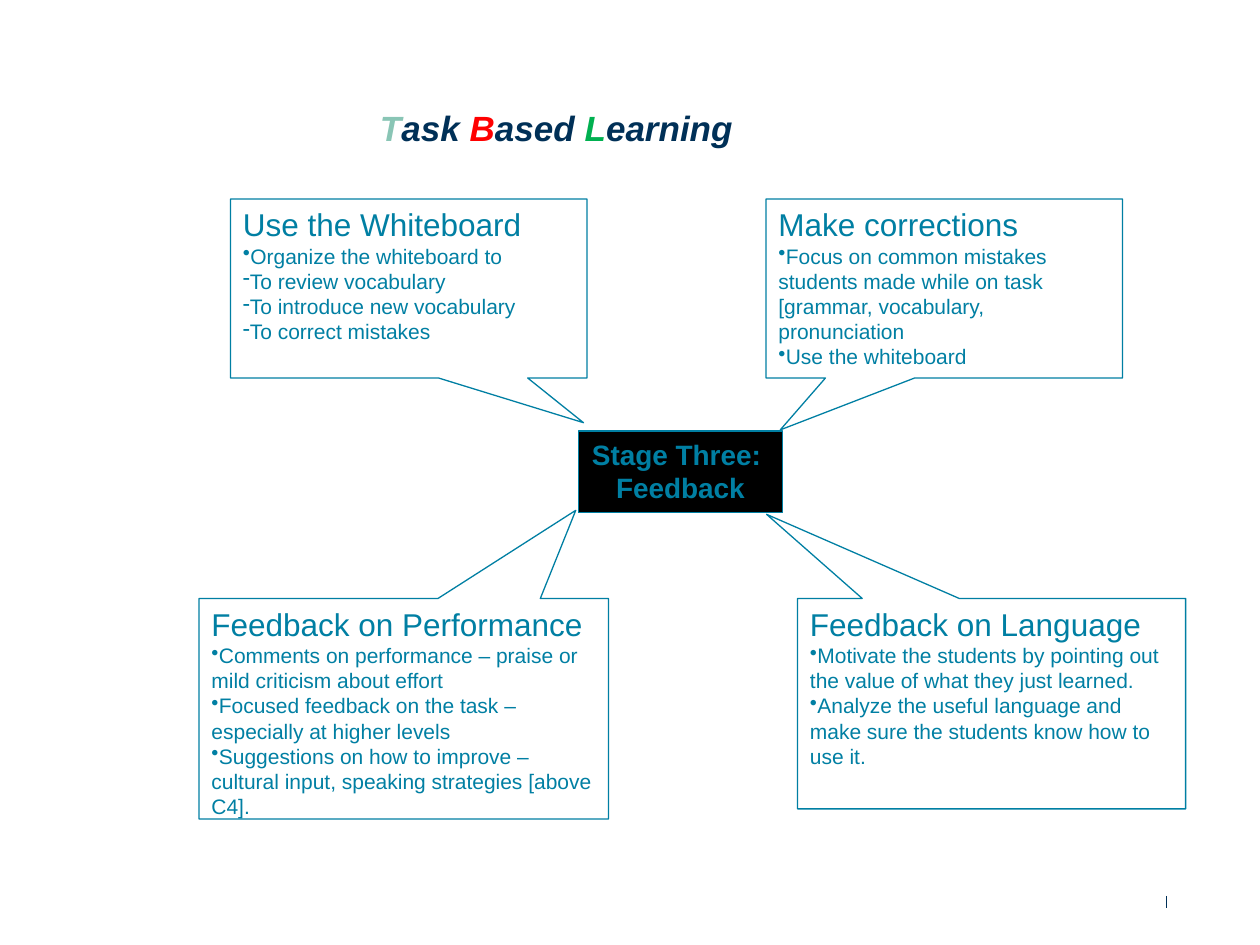
import pptx
import pptx.dml.color
import pptx.enum.shapes
import pptx.enum.text
import pptx.oxml.ns
import pptx.util
from lxml import etree
from pptx.util import Inches

NAVY = pptx.dml.color.RGBColor(0x00, 0x30, 0x57)
TEAL = pptx.dml.color.RGBColor(0x00, 0x7F, 0xA3)
MINT = pptx.dml.color.RGBColor(0x89, 0xC5, 0xB5)
RED = pptx.dml.color.RGBColor(0xFF, 0x00, 0x00)
GREEN = pptx.dml.color.RGBColor(0x00, 0xB0, 0x50)
BLACK = pptx.dml.color.RGBColor(0x00, 0x00, 0x00)

SHAPE = pptx.enum.shapes.MSO_SHAPE
ALIGN = pptx.enum.text.PP_ALIGN
ANCHOR = pptx.enum.text.MSO_ANCHOR

TITLE = [("T", MINT), ("ask ", NAVY), ("B", RED), ("ased ", NAVY),
         ("L", GREEN), ("earning", NAVY)]

CALLOUTS = [
    ((1.83, 1.58, 2.83, 1.42), (0.49, 0.75), "Use the Whiteboard", [
        ("•", "Organize the whiteboard to"),
        ("-", "To review vocabulary"),
        ("-", "To introduce new vocabulary"),
        ("-", "To correct mistakes")]),
    ((1.58, 4.75, 3.25, 1.75), (0.42, -0.9), "Feedback on Performance", [
        ("•", "Comments on performance – praise or mild criticism about effort"),
        ("•", "Focused feedback on the task – especially at higher levels"),
        ("•", "Suggestions on how to improve – cultural input, "
              "speaking strategies [above C4].")]),
    ((6.08, 1.58, 2.83, 1.42), (-0.46, 0.79), "Make corrections", [
        ("•", "Focus on common mistakes students made while on task "
              "[grammar, vocabulary, pronunciation"),
        ("•", "Use the whiteboard")]),
    ((6.33, 4.75, 3.08, 1.67), (-0.58, -0.9), "Feedback on Language", [
        ("•", "Motivate the students by pointing out the value of "
              "what they just learned."),
        ("•", "Analyze the useful language and make sure the students "
              "know how to use it.")]),
]


def set_all(obj, **values):
    """Set each named attribute on an object."""
    for name, value in values.items():
        setattr(obj, name, value)


def set_font(font, size, color, **values):
    """Format a font in Arial with a size and a colour."""
    set_all(font, name="Arial", size=pptx.util.Pt(size), **values)
    font.color.rgb = color


def add_bullet(p, char):
    """Give a paragraph a bullet character."""
    etree.SubElement(p._p.get_or_add_pPr(), pptx.oxml.ns.qn("a:buChar"), char=char)


def add_box(slide, kind, box):
    """Add an outlined shape without shadow and return it."""
    sp = slide.shapes.add_shape(kind, *map(Inches, box))
    sp.shadow.inherit = False
    sp.line.color.rgb = TEAL
    sp.line.width = pptx.util.Pt(0.75)
    sp.text_frame.vertical_anchor = ANCHOR.TOP
    return sp


def add_title(slide, box):
    """Place the title with its coloured initials."""
    sp = slide.shapes.title
    left, top, width, height = map(Inches, box)
    set_all(sp, left=left, top=top, width=width, height=height)
    tf = sp.text_frame
    set_all(tf, margin_left=0, margin_top=0, margin_right=0, margin_bottom=0,
            vertical_anchor=ANCHOR.TOP, word_wrap=True)
    p = tf.paragraphs[0]
    set_all(p, alignment=ALIGN.CENTER, line_spacing=pptx.util.Pt(40),
            space_before=pptx.util.Pt(0))
    for text, color in TITLE:
        r = p.add_run()
        r.text = text
        set_font(r.font, 20, color, bold=True, italic=True)


def add_stage(slide, box):
    """Add the black stage box in the centre."""
    sp = add_box(slide, SHAPE.RECTANGLE, box)
    sp.fill.solid()
    sp.fill.fore_color.rgb = BLACK
    tf = sp.text_frame
    tf.text = "Stage Three: \nFeedback"
    set_all(tf, word_wrap=False,
            auto_size=pptx.enum.text.MSO_AUTO_SIZE.SHAPE_TO_FIT_TEXT)
    for p in tf.paragraphs:
        p.alignment = ALIGN.CENTER
        set_font(p.font, 16, TEAL, bold=True)


def add_callout(slide, box, tip, heading, items):
    """Add a callout with a heading and bulleted items."""
    sp = add_box(slide, SHAPE.RECTANGULAR_CALLOUT, box)
    sp.fill.background()
    sp.adjustments[0], sp.adjustments[1] = tip
    tf = sp.text_frame
    tf.word_wrap = True
    p = tf.paragraphs[0]
    p.text = heading
    p.alignment = ALIGN.LEFT
    set_font(p.font, 18, TEAL)
    for char, text in items:
        p = tf.add_paragraph()
        p.text = text
        p.alignment = ALIGN.LEFT
        add_bullet(p, char)
        set_font(p.font, 12, TEAL)


def add_footer_rule(slide, box):
    """Add the short vertical rule at the foot of the slide."""
    x, y, width, height = box
    cxn = slide.shapes.add_connector(
        pptx.enum.shapes.MSO_CONNECTOR.STRAIGHT,
        *map(Inches, (x, y, x + width, y + height)))
    cxn.line.color.rgb = NAVY
    cxn.line.width = pptx.util.Pt(0.5)
    etree.SubElement(cxn._element.spPr, pptx.oxml.ns.qn("a:effectLst"))


def main():
    """Build the slide and save it."""
    prs = pptx.Presentation()
    set_all(prs, slide_width=Inches(10), slide_height=Inches(7.5))
    slide = prs.slides.add_slide(prs.slide_layouts[5])
    add_footer_rule(slide, (9.26, 7.11, 0, 0.1))
    add_title(slide, (0, 0.62, 8.83, 0.62))
    add_stage(slide, (4.59, 3.42, 1.62, 0.65))
    for callout in CALLOUTS:
        add_callout(slide, *callout)
    prs.save("out.pptx")


if __name__ == "__main__":
    main()
